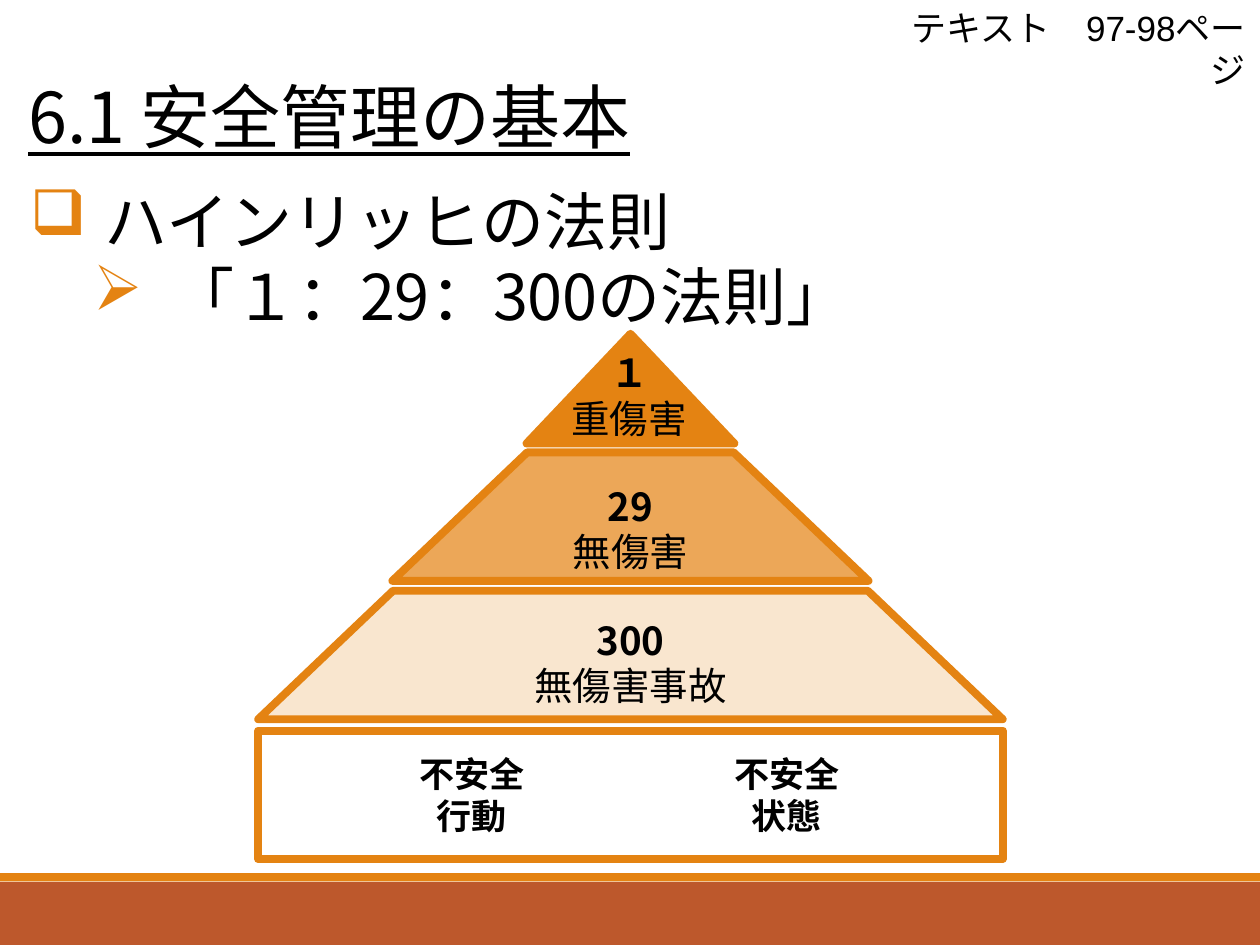
from dataclasses import dataclass
from typing import Optional

from lxml import etree
from pptx import Presentation
from pptx.dml.color import RGBColor
from pptx.enum.shapes import MSO_SHAPE
from pptx.enum.text import MSO_ANCHOR, PP_ALIGN
from pptx.oxml.ns import qn
from pptx.util import Cm, Pt

RECTANGLE = MSO_SHAPE.RECTANGLE
TRIANGLE = MSO_SHAPE.ISOSCELES_TRIANGLE
TRAPEZOID = MSO_SHAPE.TRAPEZOID
LEFT, CENTER, RIGHT = PP_ALIGN.LEFT, PP_ALIGN.CENTER, PP_ALIGN.RIGHT
TOP, MIDDLE = MSO_ANCHOR.TOP, MSO_ANCHOR.MIDDLE

ORANGE = RGBColor(0xE4, 0x83, 0x12)
RUST = RGBColor(0xBD, 0x58, 0x2C)
WHITE = RGBColor(0xFF, 0xFF, 0xFF)
BLACK = RGBColor(0, 0, 0)

JAPANESE = "Noto Sans CJK JP"
SLIDE_WIDTH, SLIDE_HEIGHT = 25.4, 19.05
PYRAMID_CENTER = 12.71
LINE_PITCH = 1.2


@dataclass(frozen=True)
class Tier:
    geometry: MSO_SHAPE
    top: float
    width: float
    height: float
    fill: RGBColor = ORANGE
    opacity: int = 100
    count: Optional[str] = None
    outcome: Optional[str] = None


@dataclass(frozen=True)
class Topic:
    text: str
    bullet: str
    indent: float
    hanging: float
    level: int = 0


TIERS = (
    Tier(RECTANGLE, 14.73, 15.01, 2.59, fill=WHITE),
    Tier(TRIANGLE, 6.73, 4.19, 2.21),
    Tier(TRAPEZOID, 11.91, 15.01, 2.59, opacity=20, count="300", outcome="無傷害事故"),
    Tier(TRAPEZOID, 9.12, 9.6, 2.59, opacity=70, count="29", outcome="無傷害"),
)
TOPICS = (
    Topic("ハインリッヒの法則", "❑", 1.5, 1.5),
    Topic("「１：29：300の法則」", "➢", 2.84, 1.57, level=1),
)
CAUSE_ROWS = (("不安全", "不安全"), ("行動", "状態"))
CAUSE_CENTERS = (4.06, 10.41)


def write(paragraph, text, *, size, font=JAPANESE, bold=False, underline=False,
          align=LEFT):
    """Append a formatted run to a paragraph."""
    paragraph.alignment = align
    paragraph.line_spacing = Pt(round(size * LINE_PITCH))
    paragraph.space_before = paragraph.space_after = Pt(0)
    run = paragraph.add_run()
    run.text = text
    run.font.name = font
    run.font.size = Pt(size)
    run.font.bold = bold
    run.font.underline = underline
    run.font.color.rgb = BLACK
    latin = run.font._element.find(qn("a:latin"))
    east_asian = etree.Element(qn("a:ea"), typeface=JAPANESE)
    latin.addnext(east_asian)


def next_paragraph(frame, index: int):
    return frame.paragraphs[0] if index == 0 else frame.add_paragraph()


def add_text_box(slide, left: float, top: float, width: float, height: float,
                 wrap: bool = True):
    box = slide.shapes.add_textbox(Cm(left), Cm(top), Cm(width), Cm(height))
    box.text_frame.word_wrap = wrap
    return box.text_frame


def add_block(slide, geometry, left: float, top: float, width: float,
              height: float, fill: RGBColor):
    block = slide.shapes.add_shape(geometry, Cm(left), Cm(top), Cm(width), Cm(height))
    block.shadow.inherit = False
    block.fill.solid()
    block.fill.fore_color.rgb = fill
    block.line.fill.background()
    return block


def add_tier(slide, tier: Tier):
    block = add_block(slide, tier.geometry, PYRAMID_CENTER - tier.width / 2,
                      tier.top, tier.width, tier.height, tier.fill)
    block.line.color.rgb = ORANGE
    block.line.width = Pt(4.5)
    outline = block._element.spPr.find(qn("a:ln"))
    etree.SubElement(outline, qn("a:round"))
    if tier.geometry == TRAPEZOID:
        block.adjustments[0] = 1.05
    if tier.opacity < 100:
        color = block._element.spPr.find(qn("a:solidFill"))[0]
        etree.SubElement(color, qn("a:alpha"), val=str(tier.opacity * 1000))
    block.text_frame.vertical_anchor = MIDDLE
    if tier.count:
        write_tier_label(block.text_frame, tier.count, tier.outcome)
    return block


def write_tier_label(frame, count: str, outcome: str, font: str = JAPANESE) -> None:
    for index, text in enumerate((count, outcome)):
        write(next_paragraph(frame, index), text, size=22, font=font,
              bold=index == 0, align=CENTER)


def write_causes(frame) -> None:
    """Set the two causes in columns on centred tab stops."""
    for index, row in enumerate(CAUSE_ROWS):
        paragraph = next_paragraph(frame, index)
        write(paragraph, "".join("\t" + cause for cause in row), size=20, bold=True)
        stops = etree.SubElement(paragraph._p.get_or_add_pPr(), qn("a:tabLst"))
        for center in CAUSE_CENTERS:
            etree.SubElement(stops, qn("a:tab"), pos=str(Cm(center)), algn="ctr")


def write_topic(paragraph, topic: Topic) -> None:
    paragraph.level = topic.level
    write(paragraph, topic.text, size=36)
    properties = paragraph._p.get_or_add_pPr()
    properties.set("marL", str(Cm(topic.indent)))
    properties.set("indent", str(-Cm(topic.hanging)))
    bullet_color = etree.SubElement(properties, qn("a:buClr"))
    etree.SubElement(bullet_color, qn("a:srgbClr"), val=str(ORANGE))
    etree.SubElement(properties, qn("a:buChar"), char=topic.bullet)


def main() -> None:
    deck = Presentation()
    deck.slide_width, deck.slide_height = Cm(SLIDE_WIDTH), Cm(SLIDE_HEIGHT)
    slide = deck.slides.add_slide(deck.slide_layouts[5])

    # Footer bands
    add_block(slide, RECTANGLE, 0, 17.78, SLIDE_WIDTH, 1.27, RUST)
    add_block(slide, RECTANGLE, 0, 17.6, SLIDE_WIDTH, 0.17, ORANGE)

    # Page reference
    page_reference = add_text_box(slide, 17.78, 0, 7.57, 1.12)
    write(page_reference.paragraphs[0], "テキスト\u300097-98ページ".replace("\u3000", "　"),
          size=20, font="Arial", align=RIGHT)

    # Title
    title = slide.shapes.title
    title.left, title.top = Cm(0), Cm(1.3)
    title.width, title.height = Cm(25.02), Cm(2.06)
    title.text_frame.vertical_anchor = MIDDLE
    heading = title.text_frame.paragraphs[0]
    write(heading, " ", size=40)
    write(heading, "6.1 安全管理の基本", size=40, underline=True)

    # Topics
    topics = add_text_box(slide, 0.36, 3.56, 24.66, 3.33)
    topics.vertical_anchor = TOP
    for index, topic in enumerate(TOPICS):
        write_topic(next_paragraph(topics, index), topic)

    # Pyramid on its base of causes
    base, *_ = [add_tier(slide, tier) for tier in TIERS]
    write_causes(base.text_frame)
    peak_label = add_text_box(slide, 11.25, 6.93, 2.87, 2.13, wrap=False)
    write_tier_label(peak_label, "１", "重傷害", font="Calibri")

    deck.save("out.pptx")


if __name__ == "__main__":
    main()
